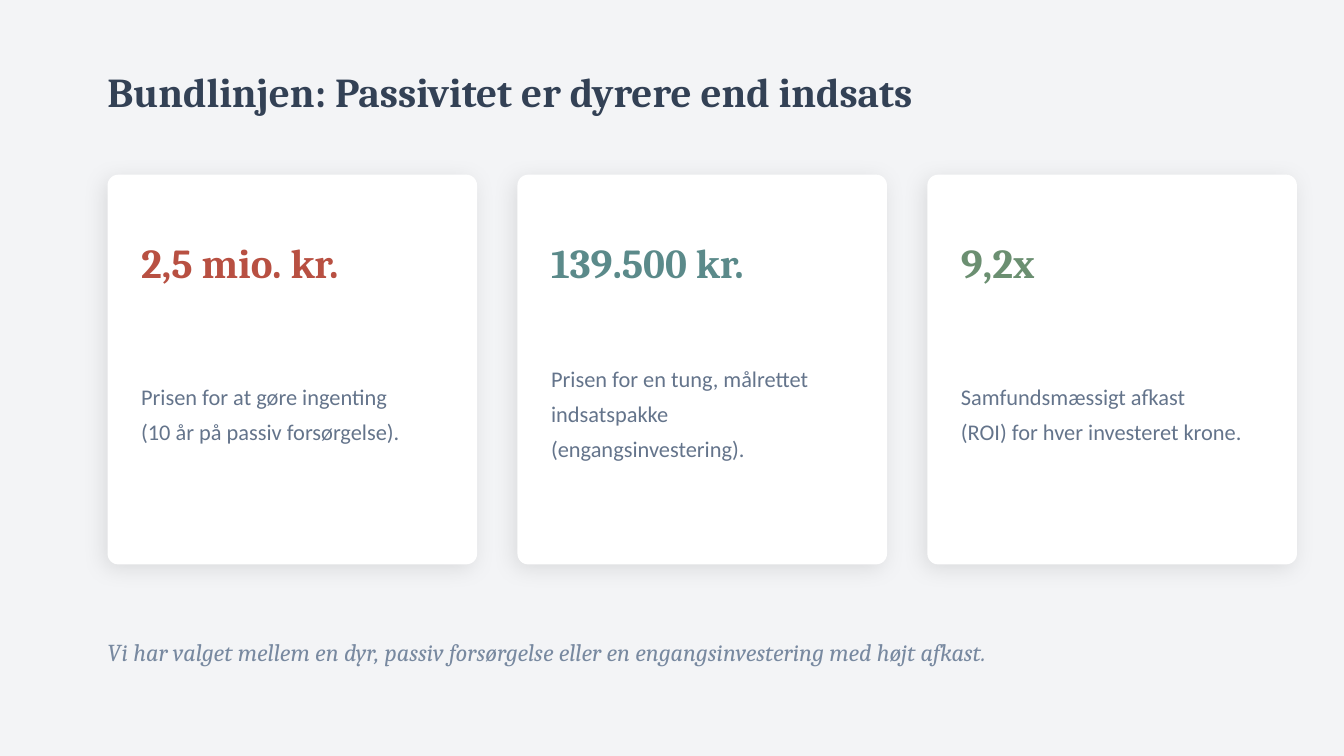
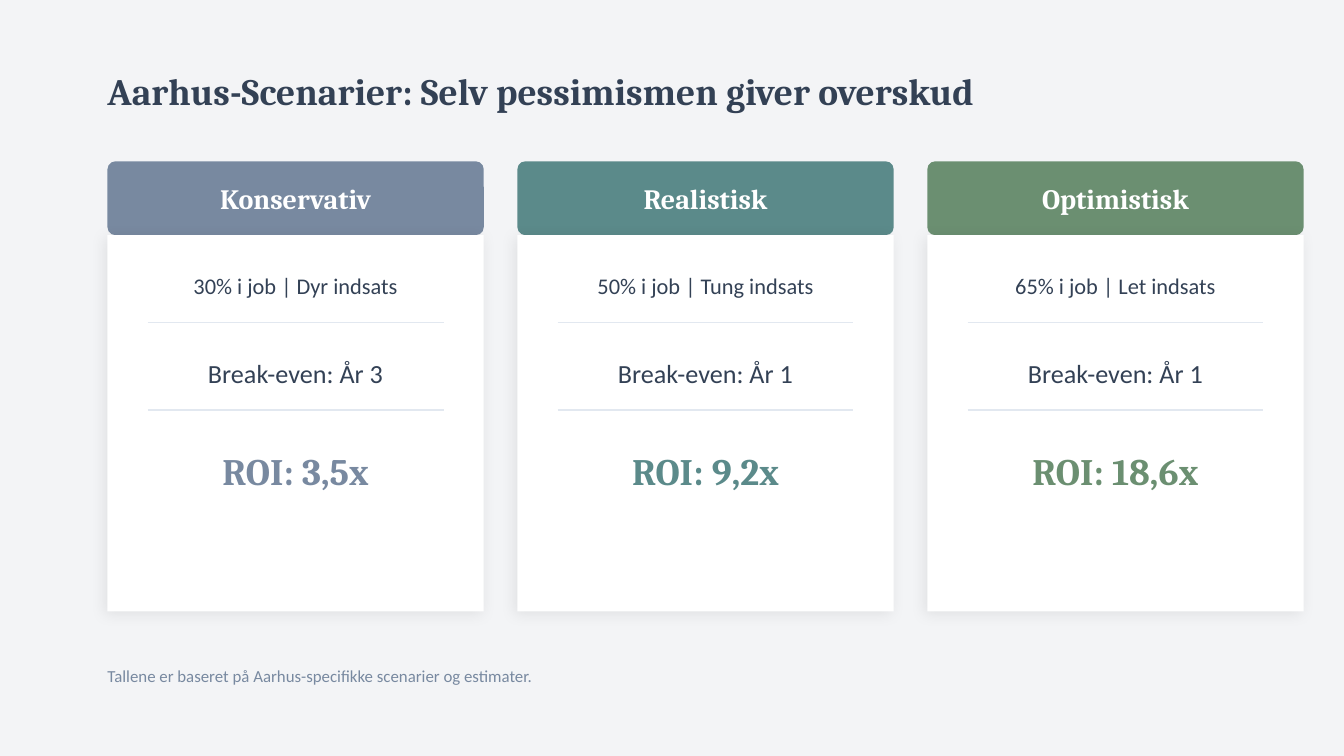
import pptx
import pptx.dml.color
import pptx.enum.shapes
import pptx.enum.text
import pptx.util
from lxml import etree
from pptx.oxml.ns import qn
from pptx.util import Inches

HEADING_FONT = "Cambria"
BODY_FONT = "Calibri"

BACKGROUND = "F3F4F6"
WHITE = "FFFFFF"
INK = "334155"
BODY_GREY = "64748B"
SLATE = "7889A0"
RUST = "B85042"
TEAL = "5B8A8A"
GREEN = "6B8F71"
RULE = "E2E8F0"

LEFT = 0.8
CONTENT_WIDTH = 8.4
COLUMN_STEP = 3.05

PRICES = [
    ("2,5 mio. kr.", RUST,
     ["Prisen for at gøre ingenting", "(10 år på passiv forsørgelse)."]),
    ("139.500 kr.", TEAL,
     ["Prisen for en tung, målrettet", "indsatspakke (engangsinvestering)."]),
    ("9,2x", GREEN,
     ["Samfundsmæssigt afkast", "(ROI) for hver investeret krone."]),
]

SCENARIOS = [
    ("Konservativ", SLATE, "30% i job | Dyr indsats", "Break-even: År 3", "ROI: 3,5x"),
    ("Realistisk", TEAL, "50% i job | Tung indsats", "Break-even: År 1", "ROI: 9,2x"),
    ("Optimistisk", GREEN, "65% i job | Let indsats", "Break-even: År 1", "ROI: 18,6x"),
]


def rgb(color):
    return pptx.dml.color.RGBColor.from_string(color)


def write(shape, lines, size, color, font=BODY_FONT, bold=False, italic=False,
          centred=False, spacing=None):
    """Fill a shape's text frame with one paragraph per line."""
    frame = shape.text_frame
    frame.word_wrap = True
    frame.vertical_anchor = pptx.enum.text.MSO_ANCHOR.MIDDLE
    frame.margin_left = frame.margin_right = 0
    frame.margin_top = frame.margin_bottom = 0
    frame.text = "\n".join(lines)
    align = pptx.enum.text.PP_ALIGN
    for paragraph in frame.paragraphs:
        paragraph.alignment = align.CENTER if centred else align.LEFT
        paragraph.line_spacing = spacing
        paragraph.font.name = font
        paragraph.font.size = pptx.util.Pt(size)
        paragraph.font.bold = bold
        paragraph.font.italic = italic
        paragraph.font.color.rgb = rgb(color)


def add_text(slide, left, top, width, height, lines, size, color, **style):
    box = slide.shapes.add_textbox(
        Inches(left), Inches(top), Inches(width), Inches(height))
    write(box, lines, size, color, **style)


def add_panel(slide, left, top, width, height, color, radius=0):
    """Add a filled rectangle without outline; radius is in inches."""
    kinds = pptx.enum.shapes.MSO_SHAPE
    panel = slide.shapes.add_shape(
        kinds.ROUNDED_RECTANGLE if radius else kinds.RECTANGLE,
        Inches(left), Inches(top), Inches(width), Inches(height))
    if radius:
        panel.adjustments[0] = radius / min(width, height)
    panel.fill.solid()
    panel.fill.fore_color.rgb = rgb(color)
    panel.line.fill.background()
    panel.shadow.inherit = False
    return panel


def add_soft_shadow(panel, opacity, blur, distance):
    """Cast a black shadow down to the left; opacity in percent, the rest in points."""
    effects = panel._element.spPr.find(qn("a:effectLst"))
    shadow = etree.SubElement(
        effects, qn("a:outerShdw"), blurRad=str(pptx.util.Pt(blur)),
        dist=str(pptx.util.Pt(distance)), dir=str(135 * 60000),
        algn="bl", rotWithShape="0")
    shade = etree.SubElement(shadow, qn("a:srgbClr"), val="000000")
    etree.SubElement(shade, qn("a:alpha"), val=str(opacity * 1000))


def add_rule(slide, left, top, width):
    rule = slide.shapes.add_connector(
        pptx.enum.shapes.MSO_CONNECTOR.STRAIGHT,
        Inches(left), Inches(top), Inches(left + width), Inches(top))
    rule.line.color.rgb = rgb(RULE)
    rule.line.width = pptx.util.Pt(1)
    etree.SubElement(rule._element.spPr, qn("a:effectLst"))


def add_price_card(slide, left, amount, color, description):
    card = add_panel(slide, left, 1.3, 2.75, 2.9, WHITE, radius=0.08)
    add_soft_shadow(card, opacity=10, blur=12, distance=3)
    add_text(slide, left + 0.25, 1.6, 2.25, 0.7, [amount], 22, color,
             font=HEADING_FONT, bold=True)
    add_text(slide, left + 0.25, 2.45, 2.25, 1.2, description, 12, BODY_GREY,
             spacing=1.3)


def add_scenario(slide, left, name, color, effort, break_even, roi):
    header = add_panel(slide, left, 1.2, 2.8, 0.55, color, radius=0.06)
    write(header, [name], 15, WHITE, font=HEADING_FONT, bold=True, centred=True)
    body = add_panel(slide, left, 1.75, 2.8, 2.8, WHITE)
    add_soft_shadow(body, opacity=8, blur=8, distance=2)
    for top, fact, size in [(1.9, effort, 12), (2.55, break_even, 14)]:
        add_text(slide, left + 0.2, top, 2.4, 0.45, [fact], size, INK, centred=True)
        add_rule(slide, left + 0.3, top + 0.5, 2.2)
    add_text(slide, left + 0.2, 3.2, 2.4, 0.6, [roi], 20, color,
             font=HEADING_FONT, bold=True, centred=True)


def add_titled_slide(deck, title, size):
    slide = deck.slides.add_slide(deck.slide_layouts[6])
    slide.background.fill.solid()
    slide.background.fill.fore_color.rgb = rgb(BACKGROUND)
    add_text(slide, LEFT, 0.4, CONTENT_WIDTH, 0.55, [title], size, INK,
             font=HEADING_FONT, bold=True)
    return slide


def add_columns(slide, add_column, records):
    for index, record in enumerate(records):
        add_column(slide, LEFT + index * COLUMN_STEP, *record)


def main():
    deck = pptx.Presentation()
    deck.slide_width = Inches(10)
    deck.slide_height = Inches(5.625)

    bottom_line = add_titled_slide(
        deck, "Bundlinjen: Passivitet er dyrere end indsats", 22)
    add_columns(bottom_line, add_price_card, PRICES)
    add_text(bottom_line, LEFT, 4.6, CONTENT_WIDTH, 0.5,
             ["Vi har valget mellem en dyr, passiv forsørgelse eller "
              "en engangsinvestering med højt afkast."],
             13, SLATE, font=HEADING_FONT, italic=True)

    scenarios = add_titled_slide(
        deck, "Aarhus-Scenarier: Selv pessimismen giver overskud", 20)
    add_columns(scenarios, add_scenario, SCENARIOS)
    add_text(scenarios, LEFT, 4.9, CONTENT_WIDTH, 0.25,
             ["Tallene er baseret på Aarhus-specifikke scenarier og estimater."],
             9, SLATE)

    deck.save("out.pptx")


if __name__ == "__main__":
    main()
